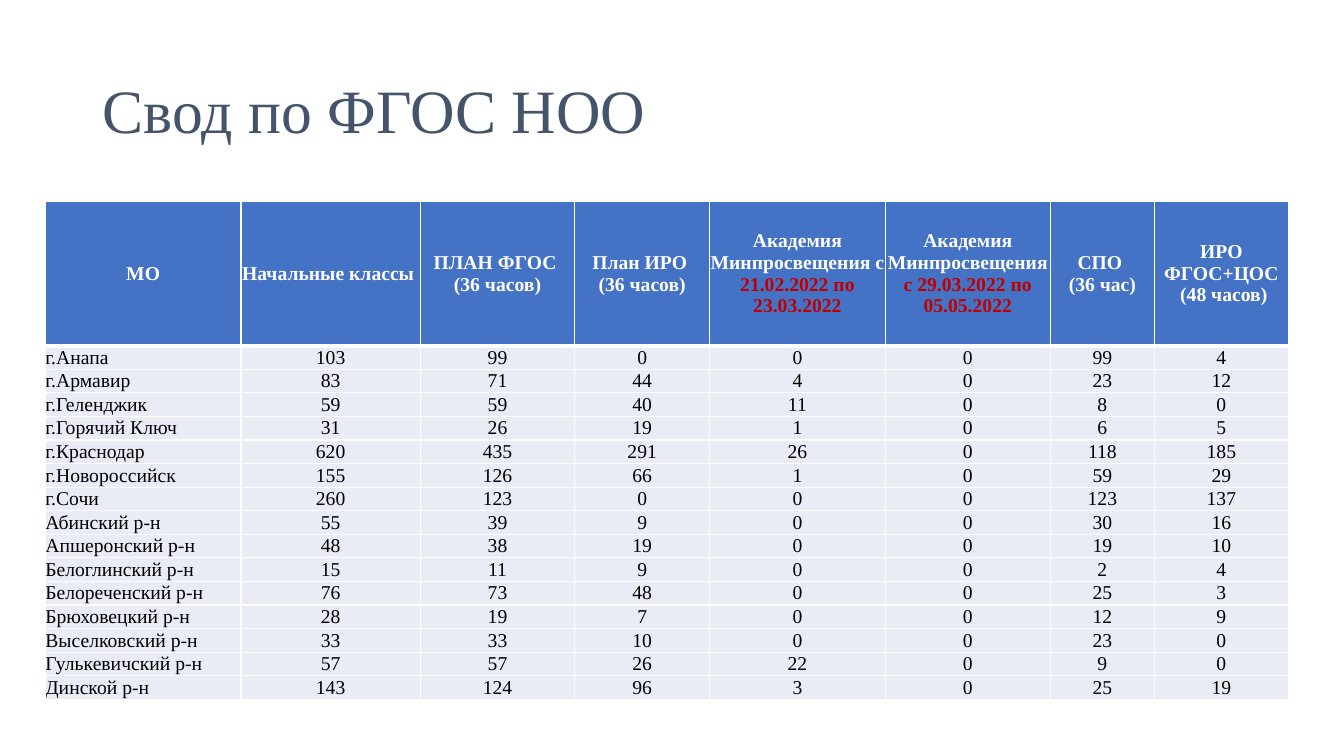
from lxml import etree
from pptx import Presentation
from pptx.dml.color import RGBColor
from pptx.enum.text import MSO_ANCHOR, PP_ALIGN
from pptx.oxml.ns import qn
from pptx.util import Inches, Pt

FONT = "Times New Roman"
WHITE, BLACK, RED = "FFFFFF", "000000", "C00000"
SLATE, BLUE, PALE = "44546A", "4472C4", "E9EBF5"

COLUMN_WIDTHS = [1.94, 1.78, 1.53, 1.34, 1.74, 1.64, 1.03, 1.33]
HEADER_HEIGHT, ROW_HEIGHT = 1.43, 0.2

# Each heading: its text, then the dates shown in red
HEADINGS = [
    ("МО", ""),
    ("Начальные классы ", ""),
    ("ПЛАН ФГОС \n(36 часов)", ""),
    ("План ИРО \n(36 часов)", ""),
    ("Академия Минпросвещения с ", "21.02.2022 по 23.03.2022"),
    ("Академия Минпросвещения ", "с 29.03.2022 по 05.05.2022"),
    ("СПО \n(36 час)", ""),
    ("ИРО ФГОС+ЦОС\n (48 часов)", ""),
]

DISTRICTS = [
    ("г.Анапа", 103, 99, 0, 0, 0, 99, 4),
    ("г.Армавир", 83, 71, 44, 4, 0, 23, 12),
    ("г.Геленджик", 59, 59, 40, 11, 0, 8, 0),
    ("г.Горячий Ключ", 31, 26, 19, 1, 0, 6, 5),
    ("г.Краснодар", 620, 435, 291, 26, 0, 118, 185),
    ("г.Новороссийск", 155, 126, 66, 1, 0, 59, 29),
    ("г.Сочи", 260, 123, 0, 0, 0, 123, 137),
    ("Абинский р-н", 55, 39, 9, 0, 0, 30, 16),
    ("Апшеронский р-н", 48, 38, 19, 0, 0, 19, 10),
    ("Белоглинский р-н", 15, 11, 9, 0, 0, 2, 4),
    ("Белореченский р-н", 76, 73, 48, 0, 0, 25, 3),
    ("Брюховецкий р-н", 28, 19, 7, 0, 0, 12, 9),
    ("Выселковский р-н", 33, 33, 10, 0, 0, 23, 0),
    ("Гулькевичский р-н", 57, 57, 26, 22, 0, 9, 0),
    ("Динской р-н", 143, 124, 96, 3, 0, 25, 19),
]


def rgb(color):
    return RGBColor.from_string(color)


def format_run(r, size, color, bold=False):
    r.font.name = FONT
    r.font.size = Pt(size)
    r.font.bold = bold
    r.font.color.rgb = rgb(color)


def add_title(slide, text):
    sp = slide.shapes.add_textbox(Inches(0.92), Inches(0.4), Inches(11.5), Inches(1.45))
    tf = sp.text_frame
    tf.word_wrap = True
    tf.vertical_anchor = MSO_ANCHOR.MIDDLE
    tf.text = text
    p = tf.paragraphs[0]
    p.line_spacing = 0.9
    format_run(p.runs[0], 44, SLATE)


def set_borders(cell, top, bottom):
    """Draw white cell edges; top and bottom are widths in points."""
    tc_pr = cell._tc.get_or_add_tcPr()
    edges = [("a:lnL", 1), ("a:lnR", 1), ("a:lnT", top), ("a:lnB", bottom)]
    for i, (tag, width) in enumerate(edges):
        ln = etree.Element(qn(tag), w=str(Pt(width)))
        fill = etree.SubElement(ln, qn("a:solidFill"))
        etree.SubElement(fill, qn("a:srgbClr"), val=WHITE)
        tc_pr.insert(i, ln)


def fill_cell(cell, text, fill, color, align, bold=False):
    cell.margin_left = cell.margin_right = cell.margin_top = cell.margin_bottom = 0
    cell.vertical_anchor = MSO_ANCHOR.MIDDLE
    cell.fill.solid()
    cell.fill.fore_color.rgb = rgb(fill)
    cell.text_frame.text = text
    for p in cell.text_frame.paragraphs:
        p.alignment = align
        for r in p.runs:
            format_run(r, 14, color, bold)


def add_heading(cell, text, dates):
    fill_cell(cell, text, BLUE, WHITE, PP_ALIGN.CENTER, bold=True)
    set_borders(cell, top=1, bottom=3)
    if dates:
        r = cell.text_frame.paragraphs[-1].add_run()
        r.text = dates
        format_run(r, 14, RED, bold=True)


def add_summary_table(slide):
    frame = slide.shapes.add_table(
        len(DISTRICTS) + 1, len(HEADINGS), Inches(0.45), Inches(2),
        Inches(sum(COLUMN_WIDTHS)), Inches(HEADER_HEIGHT + ROW_HEIGHT * len(DISTRICTS)))
    table = frame.table
    table.horz_banding = False
    for column, width in zip(table.columns, COLUMN_WIDTHS):
        column.width = Inches(width)
    for i, row in enumerate(table.rows):
        row.height = Inches(ROW_HEIGHT if i else HEADER_HEIGHT)
    for j, (text, dates) in enumerate(HEADINGS):
        add_heading(table.cell(0, j), text, dates)
    for i, district in enumerate(DISTRICTS, 1):
        for j, value in enumerate(district):
            cell = table.cell(i, j)
            align = PP_ALIGN.CENTER if j else PP_ALIGN.LEFT
            fill_cell(cell, str(value), PALE, BLACK, align)
            set_borders(cell, top=3 if i == 1 else 1, bottom=1)


def main():
    prs = Presentation()
    prs.slide_width, prs.slide_height = Inches(13.33), Inches(7.5)
    slide = prs.slides.add_slide(prs.slide_layouts[6])
    add_title(slide, "Свод по ФГОС НОО")
    add_summary_table(slide)
    prs.save("out.pptx")


if __name__ == "__main__":
    main()
